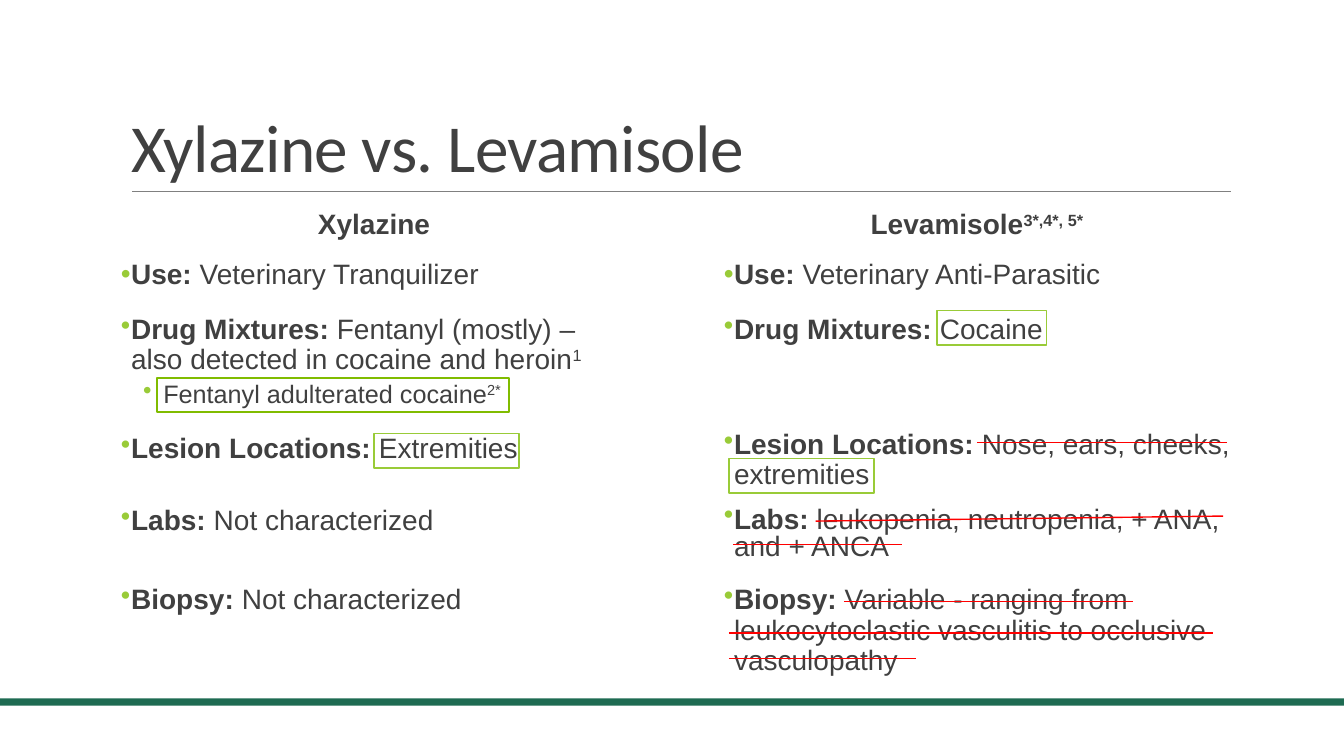
from lxml import etree
from pptx import Presentation
from pptx.dml.color import RGBColor
from pptx.enum.shapes import MSO_CONNECTOR, MSO_SHAPE
from pptx.enum.text import MSO_ANCHOR, MSO_AUTO_SIZE, PP_ALIGN
from pptx.oxml.ns import qn
from pptx.util import Inches, Pt

STRAIGHT = MSO_CONNECTOR.STRAIGHT
RECTANGLE = MSO_SHAPE.RECTANGLE
COLORS = {"text": "404040", "bullet": "99CB38", "highlight": "99CB38",
          "key": "80BC00", "strike": "FF0000", "rule": "808080", "footer": "1E6B52"}
LEFT, RIGHT, COLUMN_WIDTH = 1.2, 7.18, 5.02


def add_paragraph(frame, kind, spans, line_spacing=0.9):
    """Write a "header", "item" or "subitem" paragraph from (text, style) spans."""
    para = frame.paragraphs[0]
    first = not para.runs
    if not first:
        para = frame.add_paragraph()
    sub = kind == "subitem"
    para.level = 1 if sub else 0
    para.alignment = PP_ALIGN.CENTER if kind == "header" else PP_ALIGN.LEFT
    para.line_spacing = line_spacing
    para.space_before = Pt(0 if first else 2 if sub else 12)
    para.space_after = Pt(4 if sub else 2)

    margin, indent = {"header": (0, 0), "item": (0.1, -0.1), "subitem": (0.42, -0.2)}[kind]
    properties = para._p.get_or_add_pPr()
    properties.set("marL", str(Inches(margin)))
    properties.set("indent", str(Inches(indent)))
    if kind == "header":
        etree.SubElement(properties, qn("a:buNone"))
    else:
        bullet_color = etree.SubElement(properties, qn("a:buClr"))
        etree.SubElement(bullet_color, qn("a:srgbClr"), val=COLORS["bullet"])
        etree.SubElement(properties, qn("a:buChar"), char="•")

    for text, style in spans:
        span = para.add_run()
        span.text = text
        span.font.name = "Arial"
        span.font.size = Pt(18 if sub else 20)
        span.font.bold = "bold" in style
        span.font.color.rgb = RGBColor.from_string(COLORS["text"])
        if "super" in style:
            span.font._element.set("baseline", "30000")


def add_line(start_x, start_y, end_x, end_y, color, width):
    line = page.shapes.add_connector(STRAIGHT, Inches(start_x), Inches(start_y),
                                     Inches(end_x), Inches(end_y))
    line.line.color.rgb = RGBColor.from_string(COLORS[color])
    line.line.width = Pt(width)
    etree.SubElement(line._element.spPr, qn("a:effectLst"))


deck = Presentation()
deck.slide_width, deck.slide_height = Inches(13.33), Inches(7.5)
page = deck.slides.add_slide(deck.slide_layouts.get_by_name("Two Content"))
title, left_body, right_body = list(page.placeholders)[:3]
for spare in list(page.placeholders)[3:]:
    spare._element.getparent().remove(spare._element)

# Footer band and title rule
band = page.shapes.add_shape(RECTANGLE, 0, Inches(6.93), deck.slide_width, Inches(0.07))
band.shadow.inherit = False
band.fill.solid()
band.fill.fore_color.rgb = RGBColor.from_string(COLORS["footer"])
band.line.fill.background()
add_line(1.31, 1.9, 12.21, 1.9, "rule", 0.5)

# Title
title.left, title.top, title.width, title.height = map(Inches, (1.2, 0.31, 11, 1.59))
title.text_frame.vertical_anchor = MSO_ANCHOR.BOTTOM
title.text_frame.auto_size = MSO_AUTO_SIZE.NONE
title_para = title.text_frame.paragraphs[0]
title_para.alignment = PP_ALIGN.LEFT
title_para.line_spacing = 0.85
title_span = title_para.add_run()
title_span.text = "Xylazine vs. Levamisole"
title_span.font.name = "Calibri"
title_span.font.size = Pt(48)
title_span.font.color.rgb = RGBColor.from_string(COLORS["text"])
title_span.font._element.set("spc", "-50")

# Comparison text: placeholder or None, left, top, height, line spacing, paragraphs
blocks = [
    (left_body, LEFT, 2.04, 0.96, 0.9, [
        ("header", [("Xylazine", "bold")]),
        ("item", [("Use: ", "bold"), ("Veterinary Tranquilizer", "")])]),
    (right_body, RIGHT, 2.04, 1.06, 0.9, [
        ("header", [("Levamisole", "bold"), ("3*,4*, 5*", "bold super")]),
        ("item", [("Use: ", "bold"), ("Veterinary Anti-Parasitic", "")])]),
    (None, LEFT, 3.08, 1.41, 0.9, [
        ("item", [("Drug Mixtures: ", "bold"),
                  ("Fentanyl (mostly) – also detected in cocaine and heroin", ""),
                  ("1", "super")]),
        ("subitem", [("Fentanyl adulterated cocaine", ""), ("2*", "super")])]),
    (None, LEFT, 4.26, 0.57, 0.9, [
        ("item", [("Lesion Locations: ", "bold"), ("Extremities", "")])]),
    (None, LEFT, 4.97, 0.59, 0.9, [
        ("item", [("Labs: ", "bold"), ("Not characterized", "")])]),
    (None, LEFT, 5.76, 0.59, 0.9, [
        ("item", [("Biopsy: ", "bold"), ("Not characterized", "")])]),
    (None, RIGHT, 3.08, 0.5, 0.9, [
        ("item", [("Drug Mixtures: ", "bold"), ("Cocaine", "")])]),
    (None, RIGHT, 4.22, 0.7, 0.9, [
        ("item", [("Lesion Locations: ", "bold"),
                  ("Nose, ears, cheeks, extremities", "")])]),
    (None, RIGHT, 4.99, 0.7, 0.8, [
        ("item", [("Labs: ", "bold"),
                  ("leukopenia, neutropenia, + ANA, and + ANCA", "")])]),
    (None, RIGHT, 5.76, 1.15, 0.9, [
        ("item", [("Biopsy: ", "bold"),
                  ("Variable - ranging from leukocytoclastic vasculitis "
                   "to occlusive vasculopathy", "")])]),
]
for placeholder, left, top, height, line_spacing, paragraphs in blocks:
    box = placeholder or page.shapes.add_textbox(0, 0, 0, 0)
    box.left, box.top, box.width, box.height = map(Inches, (left, top, COLUMN_WIDTH, height))
    frame = box.text_frame
    frame.word_wrap = True
    frame.auto_size = MSO_AUTO_SIZE.NONE
    frame.vertical_anchor = MSO_ANCHOR.TOP
    frame.margin_left = frame.margin_right = 0
    frame.margin_top = frame.margin_bottom = Inches(0.05)
    for kind, spans in paragraphs:
        add_paragraph(frame, kind, spans, line_spacing)

# Boxes around shared features
for left, top, width, color in [(1.56, 3.75, 3.49, "key"), (9.29, 3.08, 1.09, "highlight"),
                                (3.71, 4.3, 1.44, "highlight"),
                                (7.23, 4.55, 1.44, "highlight")]:
    outline = page.shapes.add_shape(RECTANGLE, Inches(left), Inches(top),
                                    Inches(width), Inches(0.34))
    outline.shadow.inherit = False
    outline.fill.background()
    outline.line.color.rgb = RGBColor.from_string(COLORS[color])
    outline.line.width = Pt(1.25)

# Lines striking out differing features
for start_x, start_y, end_x, end_y in [
        (9.69, 4.39, 12.17, 4.39), (8.09, 5.17, 12.13, 5.12), (7.27, 5.4, 8.95, 5.4),
        (7.23, 6.28, 12.03, 6.28), (7.23, 6.53, 9.09, 6.53), (8.37, 5.97, 11.24, 5.97)]:
    add_line(start_x, start_y, end_x, end_y, "strike", 1)

deck.save("out.pptx")
